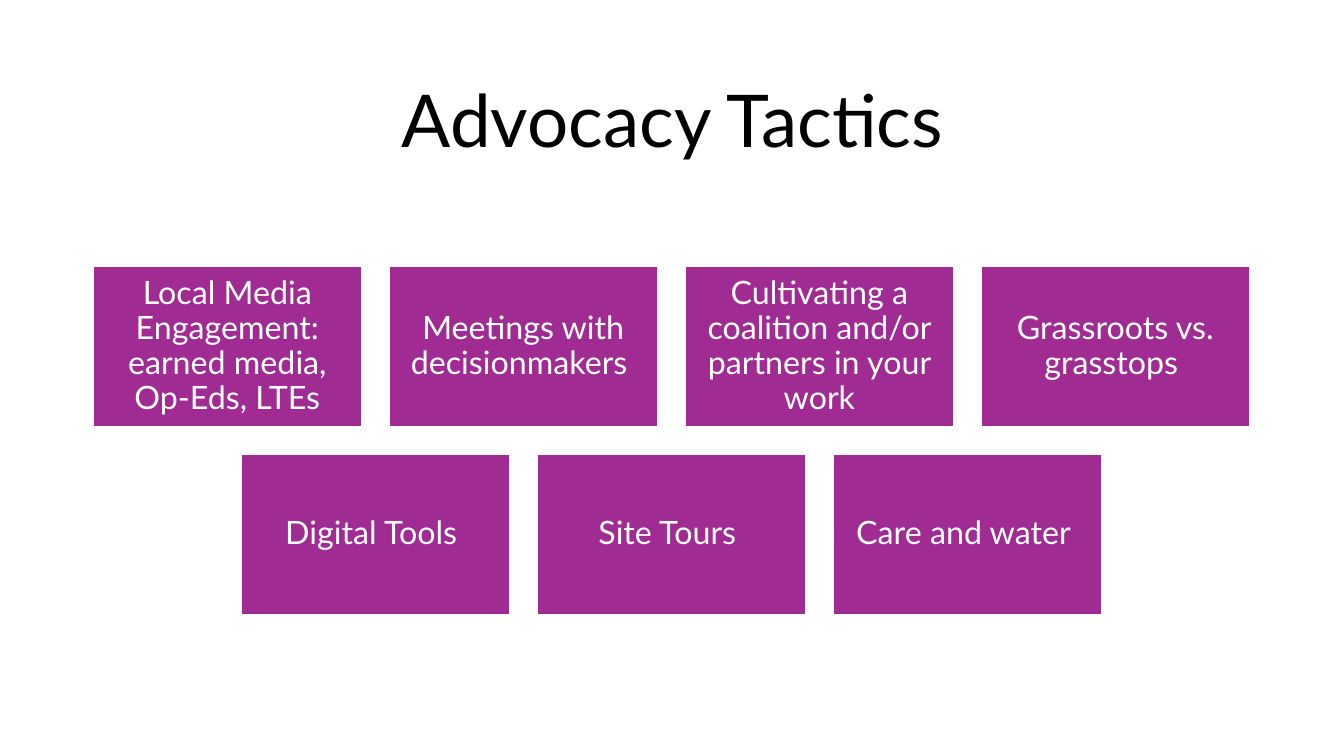
from pptx import Presentation
from pptx.dml.color import RGBColor
from pptx.enum.shapes import MSO_SHAPE
from pptx.enum.text import MSO_ANCHOR, PP_ALIGN
from pptx.util import Emu, Pt

RECTANGLE = MSO_SHAPE.RECTANGLE
MIDDLE = MSO_ANCHOR.MIDDLE
CENTER = PP_ALIGN.CENTER

COLORS = {"card": "A02B93", "white": "FFFFFF", "title": "000000"}
FONT = "Lato"
SLIDE_W, SLIDE_H = 1344, 756
CARD_W, CARD_H, GAP = 269, 161, 27
CARDS_TOP = 266
TACTICS = [
    [
        "Local Media Engagement: earned media, Op-Eds, LTEs",
        "Meetings with decisionmakers ",
        "Cultivating a coalition and/or partners in your work",
        "Grassroots vs. grasstops ",
    ],
    ["Digital Tools ", "Site Tours ", "Care and water "],
]


def px(n):
    """Turn pixels into EMU."""
    return Emu(round(n * 12192000 / SLIDE_W))


def rgb(name):
    """Look up a named colour."""
    return RGBColor.from_string(COLORS[name])


def set_text(sp, text, *, size, color, inset=10):
    """Write centred text into a shape."""
    tf = sp.text_frame
    tf.word_wrap = True
    tf.vertical_anchor = MIDDLE
    tf.margin_left = tf.margin_right = px(10)
    tf.margin_top = tf.margin_bottom = px(inset)
    p = tf.paragraphs[0]
    p.alignment = CENTER
    p.line_spacing = 0.9
    r = p.add_run()
    r.text = text
    r.font.name = FONT
    r.font.size = Pt(size)
    r.font.color.rgb = rgb(color)


def add_title(s, text):
    """Add the slide title."""
    sp = s.shapes.add_textbox(px(93), px(61), px(1159), px(125))
    set_text(sp, text, size=52, color="title", inset=5)


def add_card(s, text, left, top):
    """Add one tactic card."""
    sp = s.shapes.add_shape(RECTANGLE, px(left), px(top), px(CARD_W), px(CARD_H))
    sp.shadow.inherit = False
    sp.fill.solid()
    sp.fill.fore_color.rgb = rgb("card")
    sp.line.color.rgb = rgb("white")
    sp.line.width = Pt(1.5)
    set_text(sp, text, size=23, color="white")


def add_card_row(s, labels, top):
    """Add a row of cards centred on the slide."""
    width = len(labels) * (CARD_W + GAP) - GAP
    left = (SLIDE_W - width) // 2
    for i, label in enumerate(labels):
        add_card(s, label, left + i * (CARD_W + GAP), top)


def main():
    """Build and save the slide."""
    prs = Presentation()
    prs.slide_width, prs.slide_height = px(SLIDE_W), px(SLIDE_H)
    s = prs.slides.add_slide(prs.slide_layouts[6])
    add_title(s, "Advocacy Tactics")
    for i, labels in enumerate(TACTICS):
        add_card_row(s, labels, CARDS_TOP + i * (CARD_H + GAP))
    prs.save("out.pptx")


if __name__ == "__main__":
    main()
